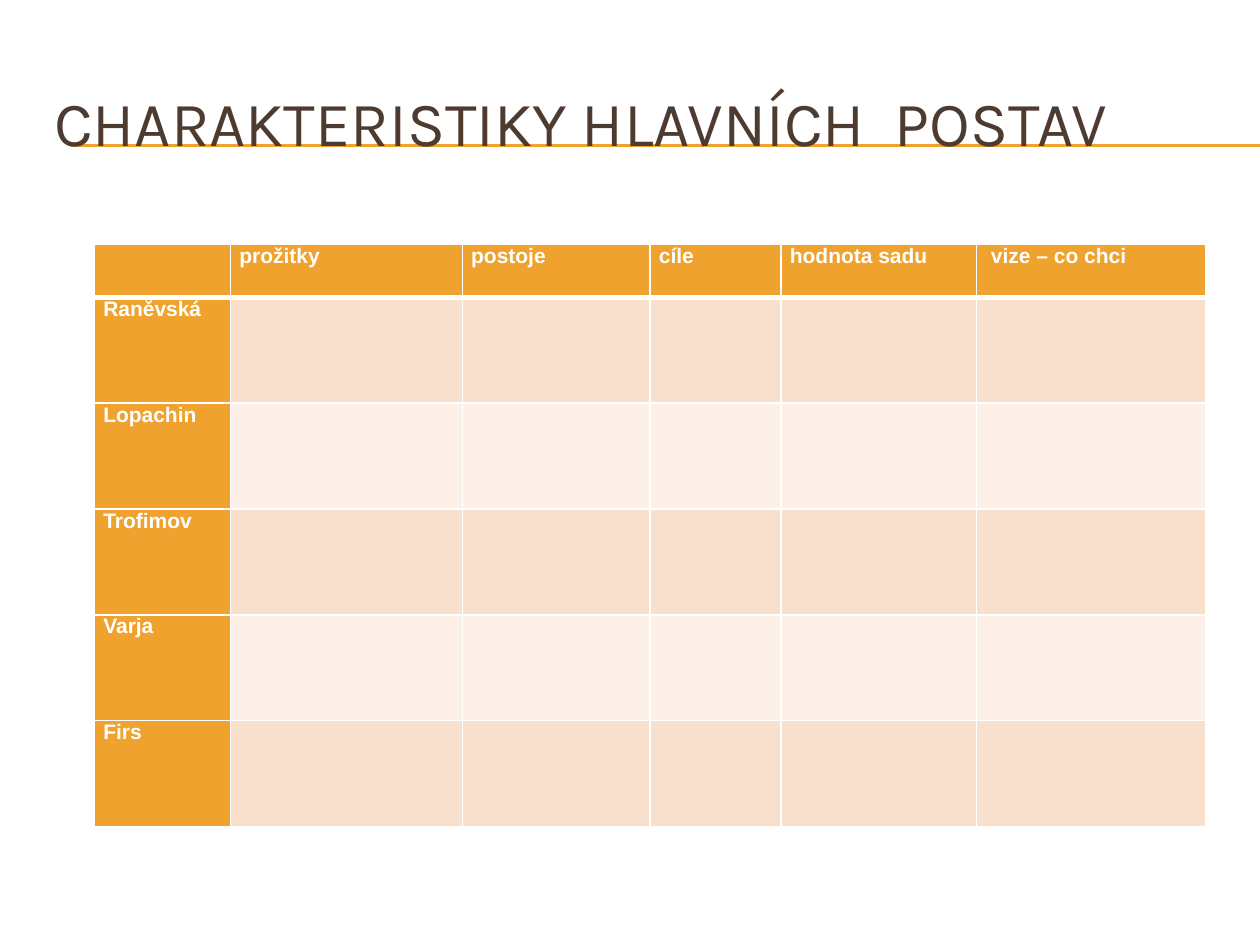
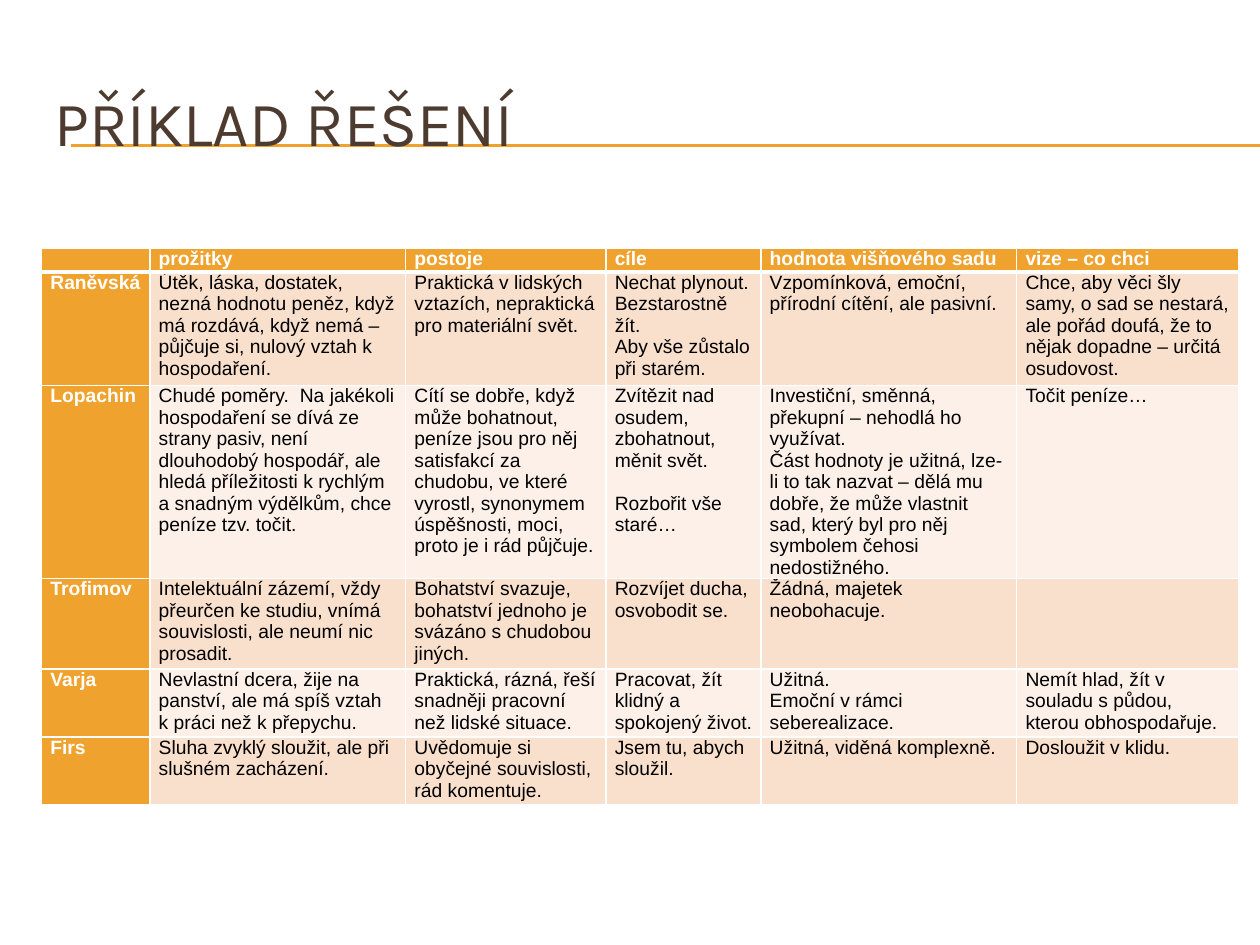
from lxml.etree import SubElement
from pptx import Presentation
from pptx.dml.color import RGBColor
from pptx.enum.shapes import MSO_CONNECTOR as LINK
from pptx.enum.text import MSO_ANCHOR as ANCHOR, MSO_AUTO_SIZE as AUTO, PP_ALIGN as ALIGN
from pptx.oxml.ns import qn
from pptx.util import Inches, Pt

GOLD, BROWN, WHITE, BLACK = "F0A22E", "4E3B30", "FFFFFF", "000000"
BANDS = "F9E0CD", "FCF0E8"
NAMES = "Raněvská", "Lopachin", "Trofimov", "Varja", "Firs"


def paint(code):
    return RGBColor.from_string(code)


def apply(item, values):
    for key, value in values.items():
        setattr(item, key, value)


class Deck:
    head = {"name": "Karla", "size": Pt(36), "bold": False}
    frame = {"word_wrap": True, "auto_size": AUTO.NONE, "vertical_anchor": ANCHOR.MIDDLE}
    inset = {"margin_left": Inches(0.07), "margin_right": Inches(0.07),
             "margin_top": 0, "margin_bottom": 0}

    def __init__(self):
        self.show = Presentation()
        apply(self.show, {"slide_width": Inches(10), "slide_height": Inches(7.5)})

    def page(self, title):
        self.slide = self.show.slides.add_slide(self.show.slide_layouts[5])
        for y in (1.15, 1.16):
            self.rule(y)
        self.title(title)

    def rule(self, y):
        tree = self.slide.shapes
        line = tree.add_connector(LINK.STRAIGHT, Inches(0.56), Inches(y), Inches(10), Inches(y))
        line.line.color.rgb = paint(GOLD)
        line.line.width = Pt(0.75)
        SubElement(line._element.spPr, qn("a:effectLst"))
        tree._spTree.insert(2, line._element)

    def title(self, text):
        box = self.slide.shapes.title
        apply(box, {"left": Inches(0.33), "top": Inches(0.5),
                    "width": Inches(9.5), "height": Inches(0.92)})
        box.text_frame.text = text
        apply(box.text_frame, self.frame)
        para = box.text_frame.paragraphs[0]
        para.alignment = ALIGN.LEFT
        apply(para.runs[0].font, self.head)
        para.runs[0].font.color.rgb = paint(BROWN)

    def table(self, left, top, wide, high, rows, size):
        grid = self.slide.shapes.add_table(len(high), len(wide), Inches(left), Inches(top),
                                           Inches(sum(wide)), Inches(sum(high))).table
        for col, width in zip(grid.columns, wide):
            col.width = Inches(width)
        for row, height in zip(grid.rows, high):
            row.height = Inches(height)
        for y, row in enumerate(rows):
            for x, text in enumerate(row):
                key = y == 0 or x == 0
                cell = grid.cell(y, x)
                apply(cell, self.inset)
                self.edge(cell, y)
                cell.fill.solid()
                cell.fill.fore_color.rgb = paint(GOLD if key else BANDS[(y - 1) % 2])
                self.label(cell.text_frame, text, size, key)

    def edge(self, cell, y):
        props = cell._tc.get_or_add_tcPr()
        thick = {0: "B", 1: "T"}.get(y)
        for side in "LRTB":
            line = SubElement(props, qn("a:ln" + side), w=str(Pt(3 if side == thick else 1)))
            fill = SubElement(line, qn("a:solidFill"))
            SubElement(fill, qn("a:srgbClr"), val=WHITE)

    def label(self, frame, text, size, key):
        if not text:
            SubElement(frame.paragraphs[0]._p, qn("a:endParaRPr"), sz=str(size * 100))
            return
        for block, part in enumerate(text.split("\n\n")):
            for step, line in enumerate(part.split("\n")):
                first = block == step == 0
                para = frame.paragraphs[0] if first else frame.add_paragraph()
                if block and not step:
                    para.space_before = Pt(size * 1.12)
                run = para.add_run()
                run.text = line
                apply(run.font, {"name": "Arial", "size": Pt(size), "bold": key})
                run.font.color.rgb = paint(WHITE if key else BLACK)


def main():
    deck = Deck()
    deck.page("CHARAKTERISTIKY HLAVNÍCH  POSTAV")
    heads = ["", "prožitky", "postoje", "cíle", "hodnota sadu", " vize – co chci"]
    deck.table(0.75, 1.94, [1.08, 1.84, 1.49, 1.04, 1.55, 1.82], [0.42] + [0.84] * 5,
               [heads] + [[name] + [""] * 5 for name in NAMES], 12)

    deck.page("PŘÍKLAD ŘEŠENÍ")
    heads = ["", "prožitky", "postoje", "cíle", "hodnota višňového sadu", "vize – co chci"]
    traits = [
        ["Útěk, láska, dostatek, nezná hodnotu peněz, když má rozdává, když nemá – "
         "půjčuje si, nulový vztah k hospodaření.",
         "Praktická v lidských vztazích, nepraktická pro materiální svět.",
         "Nechat plynout.\nBezstarostně žít.\nAby vše zůstalo při starém.",
         "Vzpomínková, emoční, přírodní cítění, ale pasivní.",
         "Chce, aby věci šly samy, o sad se nestará, ale pořád doufá, že to nějak "
         "dopadne – určitá osudovost."],
        ["Chudé poměry.  Na jakékoli hospodaření se dívá ze strany pasiv, není dlouhodobý "
         "hospodář, ale hledá příležitosti k rychlým a snadným výdělkům, chce peníze "
         "tzv. točit.",
         "Cítí se dobře, když může bohatnout, peníze jsou pro něj satisfakcí za chudobu, "
         "ve které vyrostl, synonymem úspěšnosti, moci, proto je i rád půjčuje.",
         "Zvítězit nad osudem, zbohatnout, měnit svět.\n\nRozbořit vše staré…",
         "Investiční, směnná, překupní – nehodlá ho využívat.\n"
         "Část hodnoty je užitná, lze-li to tak nazvat – dělá mu dobře, že může vlastnit "
         "sad, který byl pro něj symbolem čehosi nedostižného.",
         "Točit peníze…"],
        ["Intelektuální zázemí, vždy přeurčen ke studiu, vnímá souvislosti, ale neumí "
         "nic prosadit.",
         "Bohatství svazuje, bohatství jednoho je svázáno s chudobou jiných.",
         "Rozvíjet ducha, osvobodit se.",
         "Žádná, majetek neobohacuje.",
         ""],
        ["Nevlastní dcera, žije na panství, ale má spíš vztah k práci než k přepychu.",
         "Praktická, rázná, řeší snadněji pracovní než lidské situace.",
         "Pracovat, žít klidný a spokojený život.",
         "Užitná.\nEmoční v rámci seberealizace.",
         "Nemít hlad, žít v souladu s půdou, kterou obhospodařuje."],
        ["Sluha zvyklý sloužit, ale při slušném zacházení.",
         "Uvědomuje si obyčejné souvislosti, rád komentuje.",
         "Jsem tu, abych sloužil.",
         "Užitná, viděná komplexně.",
         "Dosloužit v klidu."],
    ]
    deck.table(0.33, 1.97, [0.86, 2.03, 1.59, 1.23, 2.03, 1.76],
               [0.18, 0.9, 1.53, 0.72, 0.54, 0.54],
               [heads] + [[name] + row for name, row in zip(NAMES, traits)], 11)
    deck.show.save("out.pptx")


if __name__ == "__main__":
    main()
